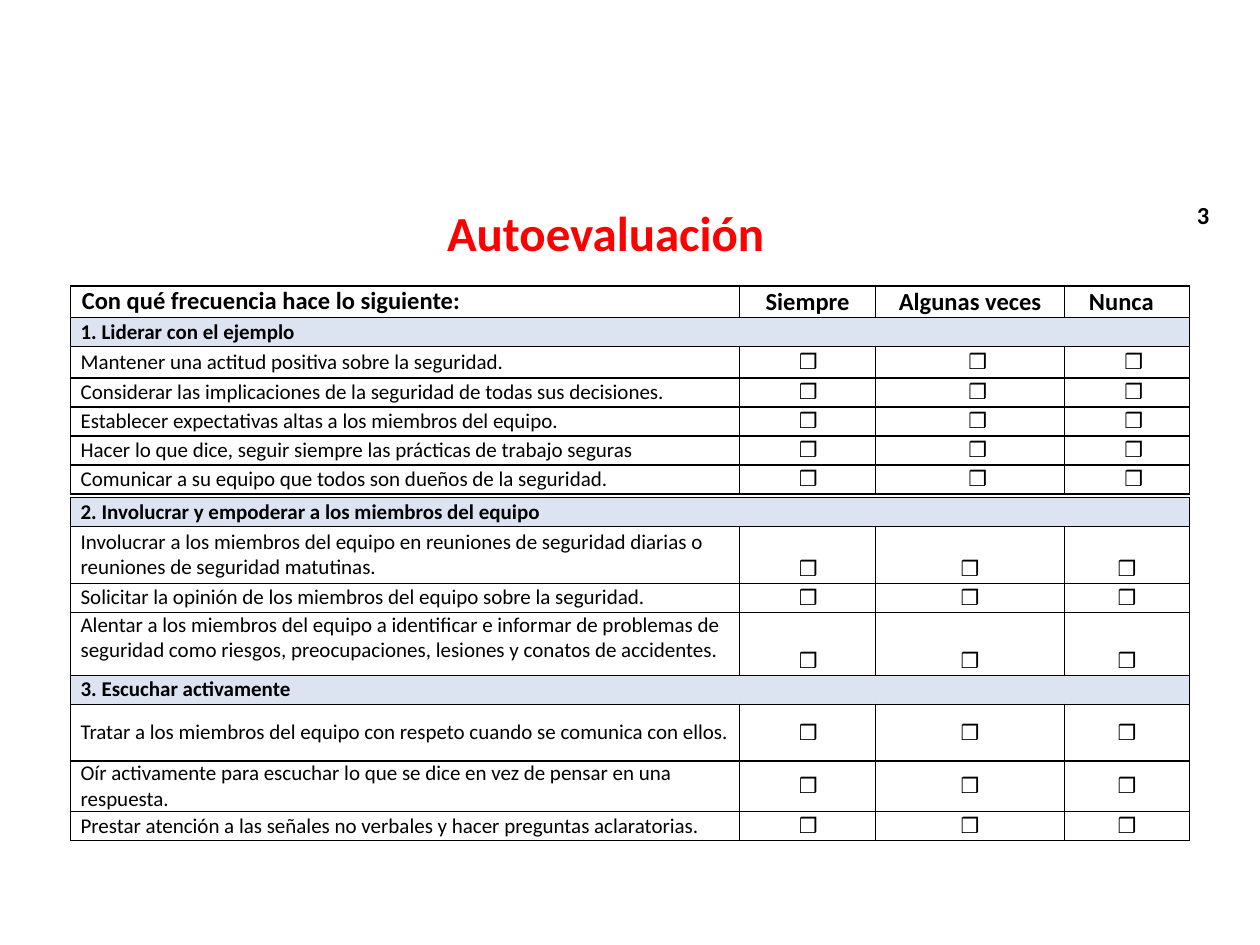
from lxml.etree import SubElement
from pptx import Presentation
from pptx.dml.color import RGBColor
from pptx.enum.text import MSO_ANCHOR, PP_ALIGN
from pptx.oxml.ns import qn
from pptx.util import Inches, Pt

LEFT, WIDTH = 0.56, 8.88
COLS = [5.31, 1.08, 1.5, 0.99]
BLACK, RED, BAND = "000000", "FF0000", "DBE4F0"
ANSWERS = ["Siempre", "Algunas veces", "Nunca"]
SECTIONS = [
    (2.52, "1. Liderar con el ejemplo", [0.01, 0.12, 0.11], [
        ("Mantener una actitud positiva sobre la seguridad.", 0.25, "middle"),
        ("Considerar las implicaciones de la seguridad de todas sus decisiones.", 0.23, "middle"),
        ("Establecer expectativas altas a los miembros del equipo.", 0.23, "middle"),
        ("Hacer lo que dice, seguir siempre las prácticas de trabajo seguras", 0.23, "middle"),
        ("Comunicar a su equipo que todos son dueños de la seguridad.", 0.23, "middle"),
    ]),
    (3.95, "2. Involucrar y empoderar a los miembros del equipo", [0.01, 0, 0], [
        ("Involucrar a los miembros del equipo en reuniones de seguridad diarias o "
         "reuniones de seguridad matutinas.", 0.45, "bottom"),
        ("Solicitar la opinión de los miembros del equipo sobre la seguridad.", 0.23, "middle"),
        ("Alentar a los miembros del equipo a identificar e informar de problemas de "
         "seguridad como riesgos, preocupaciones, lesiones y conatos de accidentes.", 0.5, "bottom"),
    ]),
    (5.36, "3. Escuchar activamente", [0.01, 0, 0], [
        ("Tratar a los miembros del equipo con respeto cuando se comunica con ellos.", 0.45, "middle"),
        ("Oír activamente para escuchar lo que se dice en vez de pensar en una respuesta.", 0.4, "middle"),
        ("Prestar atención a las señales no verbales y hacer preguntas aclaratorias.", 0.23, "middle"),
    ]),
]


def rgb(value):
    """Turn a hex string into a colour."""
    return RGBColor.from_string(value)


def write(tf, text, size=12, font="Calibri", color=BLACK, bold=False, align=PP_ALIGN.LEFT):
    """Put one formatted run in a text frame."""
    p = tf.paragraphs[0]
    p.alignment = align
    r = p.add_run()
    r.text = text
    r.font.size = Pt(size)
    r.font.name = font
    r.font.bold = bold
    r.font.color.rgb = rgb(color)


def add_label(slide, text, left, top, width, height, **fmt):
    """Add a one-line text box."""
    tf = slide.shapes.add_textbox(Inches(left), Inches(top), Inches(width), Inches(height)).text_frame
    tf.word_wrap = True
    write(tf, text, **fmt)


def add_borders(cell):
    """Draw a thin black line on the four sides of a cell."""
    tcPr = cell._tc.get_or_add_tcPr()
    for side in ("a:lnL", "a:lnR", "a:lnT", "a:lnB"):
        ln = SubElement(tcPr, qn(side), w=str(Pt(1)))
        fill = SubElement(ln, qn("a:solidFill"))
        SubElement(fill, qn("a:srgbClr"), val=BLACK)


def add_grid(slide, top, heights):
    """Add a bordered table with no fill or insets and return it."""
    frame = slide.shapes.add_table(len(heights), len(COLS), Inches(LEFT), Inches(top),
                                   Inches(WIDTH), Inches(sum(heights)))
    table = frame.table
    table.first_row = table.horz_banding = False
    for col, width in zip(table.columns, COLS):
        col.width = Inches(width)
    for row, height in zip(table.rows, heights):
        row.height = Inches(height)
    for cell in table.iter_cells():
        add_borders(cell)
        cell.fill.background()
        cell.margin_left = cell.margin_right = cell.margin_top = cell.margin_bottom = 0
        cell.vertical_anchor = MSO_ANCHOR.MIDDLE
    return table


def add_header(slide):
    """Add the row that names the question and the answers."""
    table = add_grid(slide, 2.27, [0.26])
    question = table.cell(0, 0)
    question.margin_left = Inches(0.09)
    question.vertical_anchor = MSO_ANCHOR.TOP
    write(question.text_frame, "Con qué frecuencia hace lo siguiente:", size=14, bold=True)
    for c, answer in enumerate(ANSWERS, 1):
        write(table.cell(0, c).text_frame, answer, size=14, bold=True, align=PP_ALIGN.CENTER)
    table.cell(0, 3).margin_right = Inches(0.09)


def add_section(slide, top, heading, indents, items):
    """Add a section heading and its statements with check boxes."""
    table = add_grid(slide, top, [0.23] + [height for _, height, _ in items])
    head = table.cell(0, 0)
    head.merge(table.cell(0, 3))
    head.fill.solid()
    head.fill.fore_color.rgb = rgb(BAND)
    head.margin_left = Inches(0.08)
    write(head.text_frame, heading, bold=True)
    for row, (text, height, anchor) in enumerate(items, 1):
        cell = table.cell(row, 0)
        cell.margin_left = Inches(0.08)
        if height == 0.5:
            cell.vertical_anchor = MSO_ANCHOR.TOP
        write(cell.text_frame, text)
        for c, indent in enumerate(indents, 1):
            box = table.cell(row, c)
            box.margin_left = Inches(indent)
            if anchor == "bottom":
                box.vertical_anchor = MSO_ANCHOR.BOTTOM
                box.margin_bottom = Inches(0.02)
            write(box.text_frame, "❒", font="Arial", align=PP_ALIGN.CENTER)


def main():
    """Build the self-assessment slide."""
    prs = Presentation()
    prs.slide_width, prs.slide_height = Inches(10), Inches(7.5)
    slide = prs.slides.add_slide(prs.slide_layouts[6])
    add_label(slide, "3", 9.4, 1.54, 0.5, 0.34, size=14, bold=True)
    add_header(slide)
    add_label(slide, "Autoevaluación", 3.45, 1.56, 3.11, 0.57, size=28, color=RED, bold=True)
    for section in SECTIONS:
        add_section(slide, *section)
    prs.save("out.pptx")


if __name__ == "__main__":
    main()
